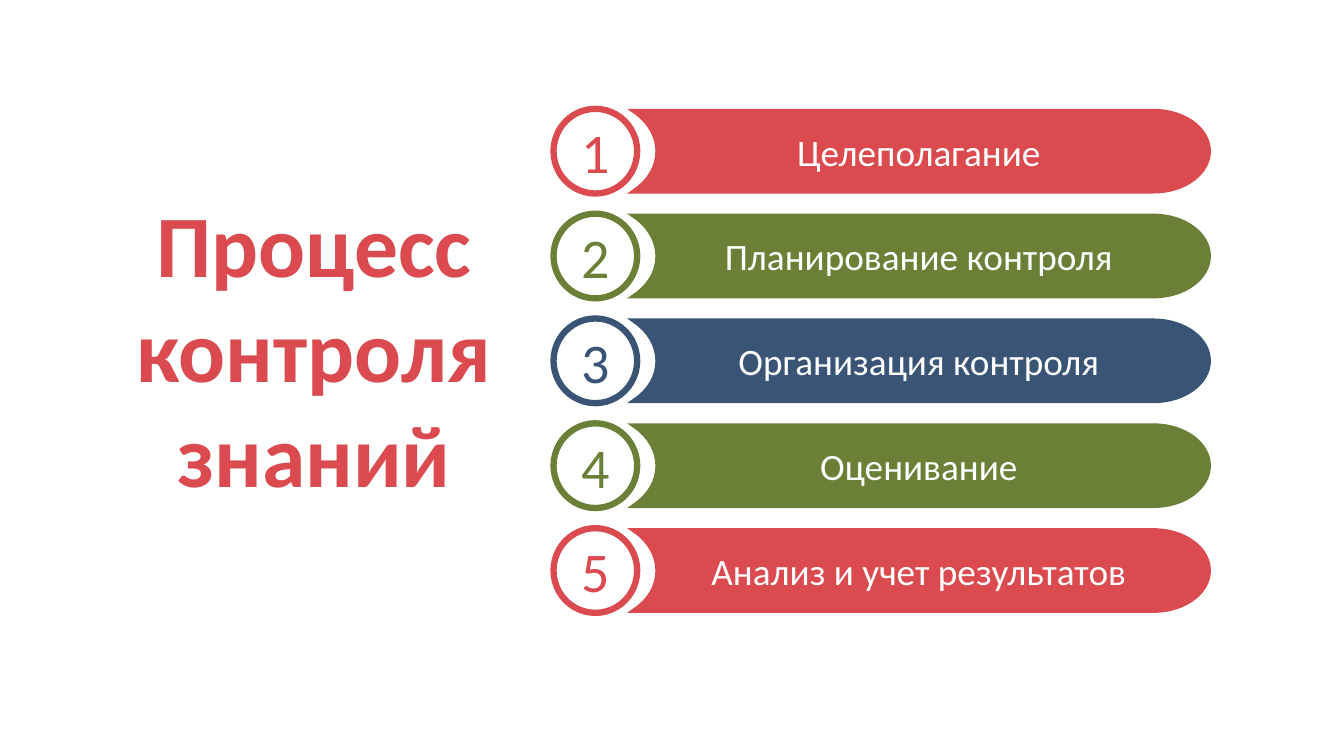
from lxml import etree
from pptx import Presentation
from pptx import util as u
from pptx.dml.color import RGBColor
from pptx.enum import shapes, text
from pptx.oxml import ns

RED, GREEN, BLUE, WHITE = "DA4A4F", "6B7F37", "395474", "FFFFFF"
STEPS = [
    ("Целеполагание", RED),
    ("Планирование контроля", GREEN),
    ("Организация контроля", BLUE),
    ("Оценивание", GREEN),
    ("Анализ и учет результатов", RED),
]
TOP, PITCH, HEIGHT = 108, 104, 84
BAR_LEFT = 622
CORNERS = [(522, 0), (579, 42), (522, 84), (0, 84), (7, 79), (28, 42), (7, 5)]
CURVES = {
    1: [(554, 0), (579, 19)],
    2: [(579, 65), (554, 84)],
    5: [(20, 70), (28, 57)],
    6: [(28, 28), (20, 14)],
}
UNIT = u.Inches(0.01)


def paint(color_format, color):
    color_format.rgb = RGBColor.from_string(color)


def write(s, words, size, color, bold=False):
    tf = s.text_frame
    tf.word_wrap = True
    tf.auto_size = text.MSO_AUTO_SIZE.NONE
    tf.vertical_anchor = text.MSO_ANCHOR.MIDDLE
    tf.margin_left = tf.margin_right = tf.margin_top = tf.margin_bottom = 0
    p = tf.paragraphs[0]
    p.alignment = text.PP_ALIGN.CENTER
    r = p.add_run()
    r.text = words
    r.font.name = "Calibri"
    r.font.size = u.Pt(size)
    r.font.bold = bold
    paint(r.font.color, color)


prs = Presentation()
prs.slide_width, prs.slide_height = u.Inches(13.33), u.Inches(7.5)
slide = prs.slides.add_slide(prs.slide_layouts[5])
sp = slide.shapes

title = sp.title
title.left, title.top = u.Inches(1.32), u.Inches(1.87)
title.width, title.height = u.Inches(3.59), u.Inches(3.16)
write(title, "Процесс контроля знаний", 62.6, RED, True)

for row, (label, color) in enumerate(STEPS):
    top = TOP + row * PITCH
    builder = sp.build_freeform(BAR_LEFT, top, scale=UNIT)
    builder.add_line_segments([(BAR_LEFT + x, top + y) for x, y in CORNERS])
    bar = builder.convert_to_shape()
    lines = list(bar.element.iter(ns.qn("a:lnTo")))
    for i, controls in CURVES.items():
        curve = etree.Element(ns.qn("a:cubicBezTo"))
        for x, y in controls + [CORNERS[i]]:
            etree.SubElement(curve, ns.qn("a:pt"), x=str(x), y=str(y))
        lines[i].getparent().replace(lines[i], curve)
    bar.shadow.inherit = False
    bar.fill.solid()
    paint(bar.fill.fore_color, color)
    bar.line.fill.background()
    write(bar, label, 26.6, WHITE)

    circle = sp.add_shape(shapes.MSO_SHAPE.OVAL, u.Inches(5.49), top * UNIT,
                          u.Inches(0.83), HEIGHT * UNIT)
    circle.shadow.inherit = False
    circle.fill.solid()
    paint(circle.fill.fore_color, WHITE)
    paint(circle.line.color, color)
    circle.line.width = u.Pt(4.5)
    write(circle, str(row + 1), 40, color)

prs.save("out.pptx")
